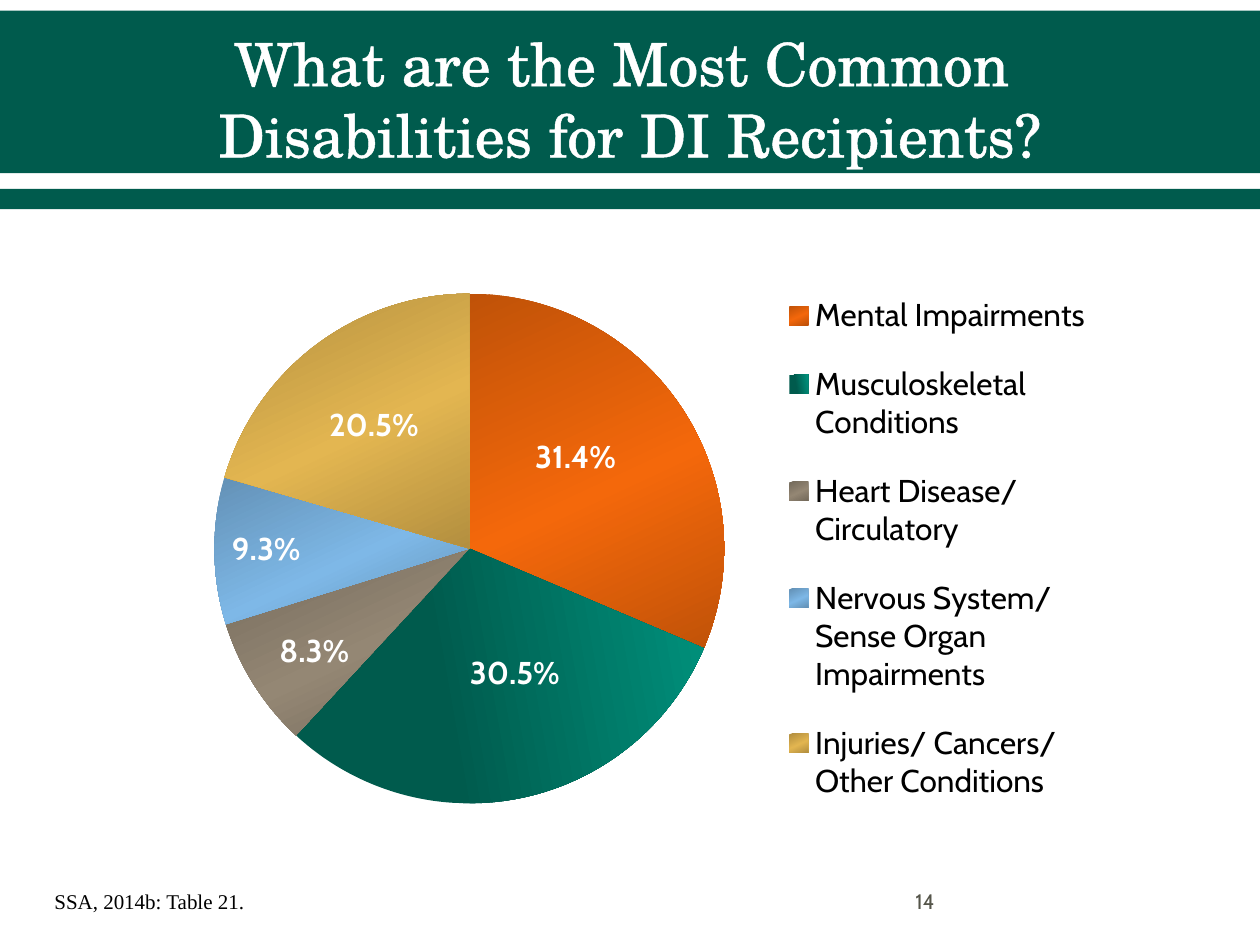
from lxml import etree
from pptx import Presentation
from pptx.chart.data import CategoryChartData
from pptx.dml.color import RGBColor
from pptx.enum.chart import XL_CHART_TYPE, XL_LABEL_POSITION, XL_LEGEND_POSITION
from pptx.enum.shapes import MSO_SHAPE
from pptx.enum.text import MSO_ANCHOR, PP_ALIGN
from pptx.oxml import parse_xml
from pptx.oxml.ns import nsdecls, qn
from pptx.util import Pt

GREEN = RGBColor(0x00, 0x5B, 0x4D)
TEAL = RGBColor(0x00, 0x92, 0x7D)
ORANGE = RGBColor(0xF4, 0x68, 0x0B)
TAUPE = RGBColor(0x94, 0x87, 0x74)
BLUE = RGBColor(0x7E, 0xB8, 0xE7)
GOLD = RGBColor(0xE3, 0xB6, 0x51)
GREY = RGBColor(0x55, 0x55, 0x4A)
WHITE = RGBColor(0xFF, 0xFF, 0xFF)
BLACK = RGBColor(0x00, 0x00, 0x00)

# category, percent, colour, label shift as a share of the chart
DISABILITIES = [
    ("Mental Impairments", 31.4, ORANGE, (0, -0.03)),
    ("Musculoskeletal Conditions", 30.5, GREEN, (0.02, 0)),
    ("Heart Disease/ Circulatory", 8.3, TAUPE, (-0.05, 0.05)),
    ("Nervous System/ Sense Organ Impairments", 9.3, BLUE, (-0.08, 0)),
    ("Injuries/ Cancers/ Other Conditions", 20.5, GOLD, (-0.02, -0.03)),
]
PERCENT = "General\\%"


def set_font(font, color, **values):
    for name, value in values.items():
        setattr(font, name, value)
    font.color.rgb = color


def add_layout(parent, index, target=None, **values):
    """Insert a manual chart layout as the given child of parent."""
    layout = etree.Element(qn("c:layout"))
    manual = etree.SubElement(layout, qn("c:manualLayout"))
    if target:
        etree.SubElement(manual, qn("c:layoutTarget"), val=target)
        values = {"xMode": "edge", "yMode": "edge", **values}
    for name, value in values.items():
        etree.SubElement(manual, qn("c:" + name), val=str(value))
    for old in parent.findall(qn("c:layout")):
        parent.remove(old)
    parent.insert(index, layout)


def fill_gradient(point, angle, stops):
    """Fill a slice with (percent, colour) stops."""
    sp_pr = point.format.fill._xPr
    stop_xml = "".join(
        f'<a:gs pos="{pos * 1000}"><a:srgbClr val="{color}"/></a:gs>' for pos, color in stops)
    sp_pr.insert(0, parse_xml(
        f'<a:gradFill {nsdecls("a")} rotWithShape="1"><a:gsLst>{stop_xml}</a:gsLst>'
        f'<a:lin ang="{angle * 60000}" scaled="0"/></a:gradFill>'))


def add_header(s, x, y, w, h):
    # Green bands: title band, then the thin rule below it
    for top, height in ((y, 93), (y + 102, 11.5)):
        band = s.shapes.add_shape(MSO_SHAPE.RECTANGLE, x, Pt(top), w, Pt(height))
        band.shadow.inherit = False
        band.fill.solid()
        band.fill.fore_color.rgb = GREEN
        band.line.fill.background()

    # Title, in front of the bands
    title = s.shapes.title
    title.left, title.top, title.width, title.height = x + Pt(36), Pt(12), w - Pt(72), Pt(h)
    s.shapes._spTree.append(title._element)
    tf = title.text_frame
    tf.word_wrap = True
    tf.vertical_anchor = MSO_ANCHOR.MIDDLE
    tf.text = "What are the Most Common \vDisabilities for DI Recipients?"
    p = tf.paragraphs[0]
    p.alignment = PP_ALIGN.CENTER
    for r in p.runs:
        set_font(r.font, WHITE, size=Pt(34), name="TeX Gyre Schola")
        r._r.get_or_add_rPr().insert(0, parse_xml(
            f'<a:ln {nsdecls("a")} w="{Pt(1.1)}"><a:solidFill>'
            f'<a:srgbClr val="{WHITE}"/></a:solidFill></a:ln>'))


def add_pie(s, x, y, w, h):
    data = CategoryChartData()
    data.categories = [name for name, *_ in DISABILITIES]
    data.add_series("Series 1", [value for _, value, *_ in DISABILITIES])
    chart = s.shapes.add_chart(XL_CHART_TYPE.PIE, x, y, w, h, data).chart
    chart.has_title = False
    set_font(chart.font, BLACK, size=Pt(18), name="Cabin")
    plot = chart.plots[0]
    plot.vary_by_categories = True
    add_layout(chart._chartSpace.chart.plotArea, 0, "inner", x=0.06, y=0.15, w=0.54, h=0.73)

    # Legend
    chart.has_legend = True
    legend = chart.legend
    legend.position = XL_LEGEND_POSITION.RIGHT
    legend.include_in_layout = False
    set_font(legend.font, BLACK, size=Pt(18), name="Cabin")
    add_layout(legend._element, 1, xMode="edge", yMode="edge", x=0.66, y=0.11, w=0.33, h=0.81)

    # Value labels
    label_font = dict(size=Pt(18), name="Cabin", bold=True)
    plot.has_data_labels = True
    labels = plot.data_labels
    labels.show_value = True
    labels.number_format, labels.number_format_is_linked = PERCENT, False
    labels.position = XL_LABEL_POSITION.CENTER
    set_font(labels.font, WHITE, **label_font)

    # Slices and their shifted labels
    for i, (_, _, color, (dx, dy)) in enumerate(DISABILITIES):
        point = plot.series[0].points[i]
        if color == GREEN:
            fill_gradient(point, 350, [(0, GREEN), (36, GREEN), (100, TEAL)])
        else:
            edge = RGBColor(*(int(part * 0.79) for part in color))
            fill_gradient(point, 65, [(0, edge), (55, color), (100, edge)])
        label = point.data_label
        set_font(label.font, WHITE, **label_font)
        label.position = XL_LABEL_POSITION.CENTER
        d_lbl = label._dLbl
        add_layout(d_lbl, 1, x=dx, y=dy)
        num_fmt = etree.Element(qn("c:numFmt"), formatCode=PERCENT, sourceLinked="0")
        d_lbl.insert(2, num_fmt)


def add_note(s, x, y, w, h, text, color, font, wrap, anchor):
    tf = s.shapes.add_textbox(x, y, w, h).text_frame
    tf.word_wrap = wrap
    tf.vertical_anchor = anchor
    r = tf.paragraphs[0].add_run()
    r.text = text
    set_font(r.font, color, size=Pt(12), name=font)


def main():
    prs = Presentation()
    prs.slide_width, prs.slide_height = Pt(720), Pt(540)
    s = prs.slides.add_slide(prs.slide_layouts[5])
    add_header(s, Pt(0), 6, Pt(720), 88)
    add_pie(s, Pt(90), Pt(108), Pt(540), Pt(399))
    # Footer: source and page number
    add_note(s, Pt(24), Pt(504), Pt(124.5), Pt(21.8), "SSA, 2014b: Table 21.",
             BLACK, "Times New Roman", False, MSO_ANCHOR.TOP)
    add_note(s, Pt(516), Pt(500.5), Pt(168), Pt(28.8), "14",
             GREY, "Cabin", True, MSO_ANCHOR.MIDDLE)
    prs.save("out.pptx")


if __name__ == "__main__":
    main()
